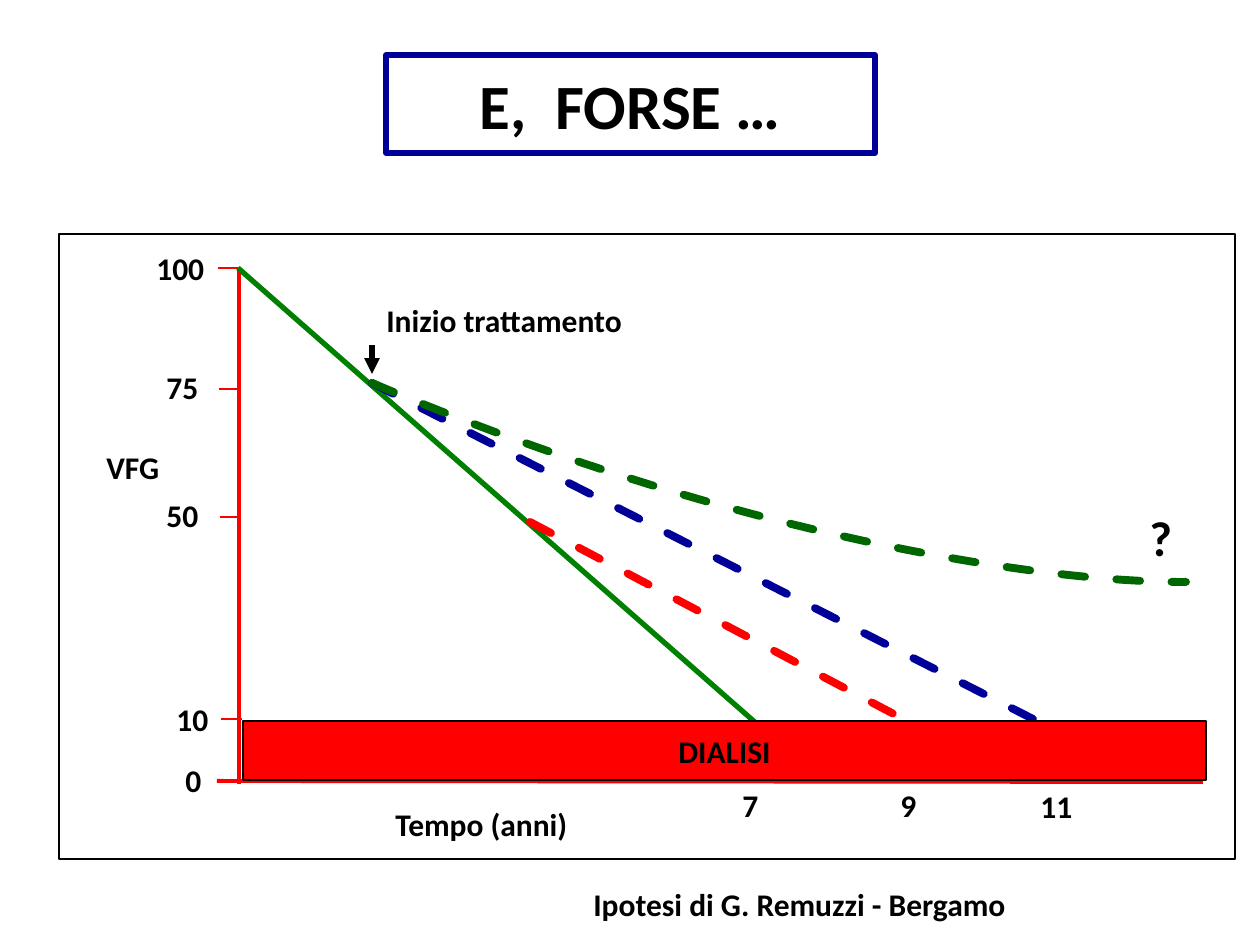
from dataclasses import dataclass

from lxml.etree import SubElement
from pptx import Presentation
from pptx.dml.color import RGBColor
from pptx.enum.dml import MSO_LINE
from pptx.enum.shapes import MSO_CONNECTOR, MSO_SHAPE
from pptx.enum.text import MSO_ANCHOR, MSO_AUTO_SIZE, PP_ALIGN
from pptx.oxml.ns import qn
from pptx.util import Emu, Pt

PX_PER_INCH = 126


@dataclass(frozen=True)
class Theme:
    font: str = "Calibri"
    black: str = "000000"
    white: str = "FFFFFF"
    red: str = "FF0000"
    blue: str = "000099"
    green: str = "008000"
    dark_green: str = "006600"
    title: int = 36
    mark: int = 28
    label: int = 18
    thin: float = 0.75
    axis: float = 2.25
    medium: float = 3
    thick: float = 4.5


@dataclass(frozen=True)
class Label:
    text: str
    x: int
    y: int
    w: int
    h: int = 50
    size: int = 18


@dataclass(frozen=True)
class Line:
    x1: int
    y1: int
    x2: int
    y2: int
    color: str
    width: float
    dashed: bool = False
    arrow: bool = False


T = Theme()

AXES = [
    Line(239, 268, 239, 784, T.red, T.axis),
    Line(217, 781, 1203, 782, T.red, T.axis),
]
TICKS = [Line(x, y, x + 21, y, T.red, T.thin)
         for x, y in ((218, 268), (219, 389), (220, 517), (221, 719))]
DECLINES = [
    Line(238, 268, 757, 724, T.green, T.medium),
    Line(530, 522, 907, 721, T.red, T.thick, dashed=True),
    Line(372, 383, 1037, 721, T.blue, T.thick, dashed=True),
    Line(372, 345, 372, 374, T.black, T.medium, arrow=True),
]
STABLE_CURVE = ((372, 383), (737, 538), (1048, 583), (1186, 582))
LABELS = [
    Label("Tempo (anni)", 383, 799, 221),
    Label("VFG", 94, 442, 89),
    Label("100", 144, 243, 77),
    Label("75", 154, 362, 59),
    Label("50", 154, 490, 59),
    Label("10", 164, 694, 59),
    Label("0", 173, 755, 43),
    Label("7", 730, 780, 43),
    Label("9", 888, 780, 43),
    Label("11", 1028, 781, 58),
    Label("Inizio trattamento", 374, 295, 262),
    Label("?", 1137, 501, 54, 72, T.mark),
    Label("Ipotesi di G. Remuzzi - Bergamo", 581, 879, 507),
]


def px(value: float) -> Emu:
    return Emu(round(value * 914400 / PX_PER_INCH))


def rgb(color: str) -> RGBColor:
    return RGBColor.from_string(color)


def write(sp, text: str, *, size: int = T.label, align=PP_ALIGN.LEFT,
          anchor=MSO_ANCHOR.TOP, wrap: bool = False,
          fit=MSO_AUTO_SIZE.NONE) -> None:
    tf = sp.text_frame
    tf.auto_size = fit
    tf.word_wrap = wrap
    tf.vertical_anchor = anchor
    p = tf.paragraphs[0]
    p.alignment = align
    r = p.add_run()
    r.text = text
    r.font.name = T.font
    r.font.size = Pt(size)
    r.font.bold = True
    r.font.color.rgb = rgb(T.black)


def paint(sp, fill: str, line: str, width: float) -> None:
    sp.fill.solid()
    sp.fill.fore_color.rgb = rgb(fill)
    sp.line.color.rgb = rgb(line)
    sp.line.width = Pt(width)


def stroke(line, color: str, width: float, dashed: bool) -> None:
    line.color.rgb = rgb(color)
    line.width = Pt(width)
    if dashed:
        line.dash_style = MSO_LINE.DASH
        line._get_or_add_ln().set("cap", "rnd")


def add_box(s, x: int, y: int, w: int, h: int, fill: str):
    sp = s.shapes.add_shape(MSO_SHAPE.RECTANGLE, px(x), px(y), px(w), px(h))
    sp.shadow.inherit = False
    paint(sp, fill, T.black, T.thin)
    return sp


def add_line(s, item: Line) -> None:
    cx = s.shapes.add_connector(MSO_CONNECTOR.STRAIGHT, px(item.x1),
                                px(item.y1), px(item.x2), px(item.y2))
    stroke(cx.line, item.color, item.width, item.dashed)
    if item.arrow:
        SubElement(cx.line._get_or_add_ln(), qn("a:tailEnd"), type="triangle")
    SubElement(cx._element.spPr, qn("a:effectLst"))


def add_label(s, item: Label) -> None:
    sp = s.shapes.add_textbox(px(item.x), px(item.y), px(item.w), px(item.h))
    write(sp, item.text, size=item.size, fit=MSO_AUTO_SIZE.SHAPE_TO_FIT_TEXT)


def add_curve(s, controls, color: str, steps: int = 60) -> None:
    """Draw a cubic Bézier curve as a fine open outline."""
    def point(t: float) -> tuple[int, int]:
        weights = ((1 - t) ** 3, 3 * t * (1 - t) ** 2, 3 * t * t * (1 - t), t ** 3)
        x, y = (sum(w * c for w, c in zip(weights, axis)) for axis in zip(*controls))
        return px(x), px(y)

    builder = s.shapes.build_freeform(*point(0))
    builder.add_line_segments([point(i / steps) for i in range(1, steps + 1)],
                              close=False)
    sp = builder.convert_to_shape()
    sp.shadow.inherit = False
    sp.fill.background()
    stroke(sp.line, color, T.thick, dashed=True)


def add_title(s, text: str) -> None:
    sp = s.shapes.title
    sp.left, sp.top, sp.width, sp.height = map(px, (386, 55, 489, 98))
    paint(sp, T.white, T.blue, T.medium)
    write(sp, text, size=T.title, align=PP_ALIGN.CENTER,
          anchor=MSO_ANCHOR.MIDDLE, wrap=True)


def main() -> None:
    prs = Presentation()
    prs.slide_width, prs.slide_height = px(1260), px(945)
    s = prs.slides.add_slide(prs.slide_layouts[5])
    add_title(s, "E,  FORSE …")
    add_box(s, 59, 234, 1176, 625, T.white)
    for item in AXES + TICKS + DECLINES:
        add_line(s, item)
    dialysis = add_box(s, 243, 721, 963, 59, T.red)
    write(dialysis, "DIALISI", align=PP_ALIGN.CENTER, anchor=MSO_ANCHOR.MIDDLE)
    add_curve(s, STABLE_CURVE, T.dark_green)
    for item in LABELS:
        add_label(s, item)
    prs.save("out.pptx")


if __name__ == "__main__":
    main()
